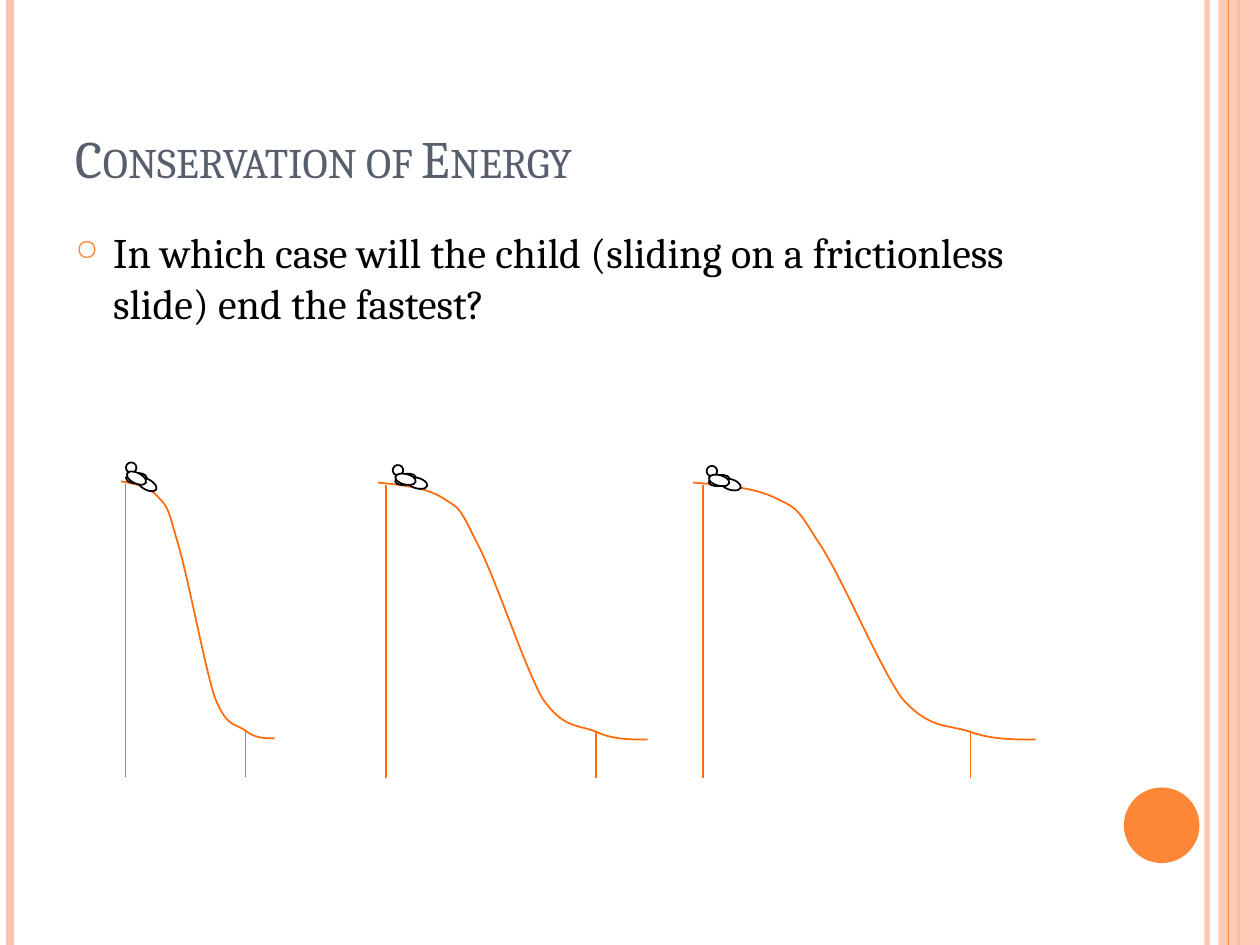
from dataclasses import dataclass
from typing import NamedTuple

from lxml.etree import SubElement
from pptx import Presentation
from pptx.dml.color import RGBColor
from pptx.enum.shapes import MSO_CONNECTOR, MSO_SHAPE
from pptx.enum.text import MSO_ANCHOR, MSO_AUTO_SIZE, PP_ALIGN
from pptx.oxml.ns import qn
from pptx.util import Inches, Pt


@dataclass(frozen=True)
class Theme:
    font: str = "Cambria"
    title_size: float = 30
    body_size: float = 24
    title: str = "575F6D"
    ink: str = "000000"
    paper: str = "FFFFFF"
    accent: str = "FE8637"
    pale: str = "FEC3AE"
    chute: str = "FF6B0A"
    thin: float = 1


class Box(NamedTuple):
    """Left, top, width and height in inches."""
    left: float
    top: float
    width: float
    height: float

    def point(self, across, down):
        return self.left + across * self.width, self.top + down * self.height

    def emu(self):
        return [Inches(length) for length in self]


THEME = Theme()
PAGE = Box(0, 0, 10, 7.5)
TITLE_BOX = Box(0.5, 0.3, 8.17, 1.25)
QUESTION_BOX = Box(0.5, 1.75, 8.17, 1.2)
CHUTE_BOXES = [Box(0.96, 3.82, 1.22, 2.04),
               Box(3, 3.83, 2.14, 2.04),
               Box(5.5, 3.83, 2.72, 2.04)]

# Left, top and tilt of each child
CHILDREN = [(1, 3.67, 0), (3.13, 3.67, -13), (5.62, 3.68, -11.4)]
CHILD_UNIT = 1 / 12
# Left, top, width and height in units, then tilt
CHILD_PARTS = [(0, 1, 2, 1, 0), (0, 0, 1, 1, 0),
               (1, 1.6, 2, 1, 28.8), (0, 1, 2, 1, 26.4)]

# Start, then three Bezier points per stretch, as shares of the chute's box
CHUTE_CURVE = [(0, 0),
               (0.09, 0.01), (0.18, 0.02), (0.24, 0.06),
               (0.3, 0.1), (0.3, 0.09), (0.36, 0.22),
               (0.43, 0.35), (0.54, 0.71), (0.61, 0.84),
               (0.69, 0.96), (0.74, 0.94), (0.81, 0.97),
               (0.87, 1), (0.94, 1), (1, 1)]
# Across, top and bottom as shares of the chute's box
POSTS = [(0.03, 0.01, 1.15), (0.81, 0.97, 1.15)]


def set_opacity(shape, percent):
    for color in shape._element.spPr.iter(qn("a:srgbClr")):
        SubElement(color, qn("a:alpha"), val=str(percent * 1000))


def add_line(shapes, start, end, color, width):
    line = shapes.add_connector(MSO_CONNECTOR.STRAIGHT,
                                *(Inches(length) for length in (*start, *end)))
    line.line.color.rgb = RGBColor.from_string(color)
    line.line.width = Pt(width)
    SubElement(line._element.spPr, qn("a:effectLst"))
    return line


def add_filled(shapes, kind, box, fill, outline=None):
    shape = shapes.add_shape(kind, *box.emu())
    shape.shadow.inherit = False
    shape.fill.solid()
    shape.fill.fore_color.rgb = RGBColor.from_string(fill)
    if outline:
        shape.line.color.rgb = RGBColor.from_string(outline)
        shape.line.width = Pt(THEME.thin)
    else:
        shape.line.fill.background()
    return shape


def add_page_edges(shapes, box):
    def add_rule(across, color, width):
        return add_line(shapes, box.point(across, 0), box.point(across, 1), color, width)

    set_opacity(add_rule(0.958, THEME.pale, 3), 93)
    add_rule(0.008, THEME.pale, 4.5)
    add_rule(0.983, THEME.accent, 1.5)
    band = add_filled(shapes, MSO_SHAPE.RECTANGLE,
                      Box(*box.point(0.967, 0), box.width / 30, box.height), THEME.pale)
    set_opacity(band, 87)
    add_rule(0.975, THEME.accent, 0.75)
    add_filled(shapes, MSO_SHAPE.OVAL, Box(8.92, 6.25, 0.6, 0.6), THEME.accent)


def write_text(shape, text, size, color):
    frame = shape.text_frame
    frame.word_wrap = True
    frame.auto_size = MSO_AUTO_SIZE.NONE
    paragraph = frame.paragraphs[0]
    paragraph.alignment = PP_ALIGN.LEFT
    run = paragraph.add_run()
    run.text = text
    run.font.name = THEME.font
    run.font.size = Pt(size)
    run.font.color.rgb = RGBColor.from_string(color)
    return paragraph, run


def place_title(title, box):
    title.left, title.top, title.width, title.height = box.emu()
    title.text_frame.vertical_anchor = MSO_ANCHOR.BOTTOM
    _, run = write_text(title, "Conservation of Energy", THEME.title_size, THEME.title)
    run.font._element.set("cap", "small")


def add_question(shapes, box):
    paragraph, _ = write_text(
        shapes.add_textbox(*box.emu()),
        "In which case will the child (sliding on a frictionless slide) end the fastest?",
        THEME.body_size, THEME.ink)
    paragraph.space_before = Pt(6)
    properties = paragraph._p.get_or_add_pPr()
    properties.set("marL", str(Inches(0.3)))
    properties.set("indent", str(-Inches(0.3)))
    SubElement(SubElement(properties, qn("a:buClr")), qn("a:srgbClr"), val=THEME.accent)
    SubElement(properties, qn("a:buSzPct"), val="70000")
    SubElement(properties, qn("a:buChar"), char="○")


def bend_segments(freeform):
    """Turn every three straight segments into one Bezier curve."""
    outline = next(freeform._element.iter(qn("a:path")))
    segments = outline.findall(qn("a:lnTo"))
    for first in range(0, len(segments), 3):
        curve = SubElement(outline, qn("a:cubicBezTo"))
        for segment in segments[first:first + 3]:
            curve.append(segment[0])
            outline.remove(segment)


def add_chute(shapes, box):
    group = shapes.add_group_shape()
    start, *points = [tuple(Inches(length) for length in box.point(*share))
                      for share in CHUTE_CURVE]
    builder = group.shapes.build_freeform(*start)
    builder.add_line_segments(points, close=False)
    curve = builder.convert_to_shape()
    bend_segments(curve)
    curve.shadow.inherit = False
    curve.fill.background()
    curve.line.color.rgb = RGBColor.from_string(THEME.chute)
    curve.line.width = Pt(THEME.thin)
    for across, top, bottom in POSTS:
        add_line(group.shapes, box.point(across, top), box.point(across, bottom),
                 THEME.chute, THEME.thin)


def add_child(shapes, left, top, tilt):
    group = shapes.add_group_shape()
    for across, down, width, height, part_tilt in CHILD_PARTS:
        box = Box(left + across * CHILD_UNIT, top + down * CHILD_UNIT,
                  width * CHILD_UNIT, height * CHILD_UNIT)
        part = add_filled(group.shapes, MSO_SHAPE.OVAL, box, THEME.paper, THEME.ink)
        part.rotation = part_tilt
    group.rotation = tilt


def main():
    presentation = Presentation()
    presentation.slide_width = Inches(PAGE.width)
    presentation.slide_height = Inches(PAGE.height)
    slide = presentation.slides.add_slide(presentation.slide_layouts[5])
    add_page_edges(slide.shapes, PAGE)
    place_title(slide.shapes.title, TITLE_BOX)
    add_question(slide.shapes, QUESTION_BOX)
    for box in CHUTE_BOXES:
        add_chute(slide.shapes, box)
    for child in CHILDREN:
        add_child(slide.shapes, *child)
    presentation.save("out.pptx")


if __name__ == "__main__":
    main()
